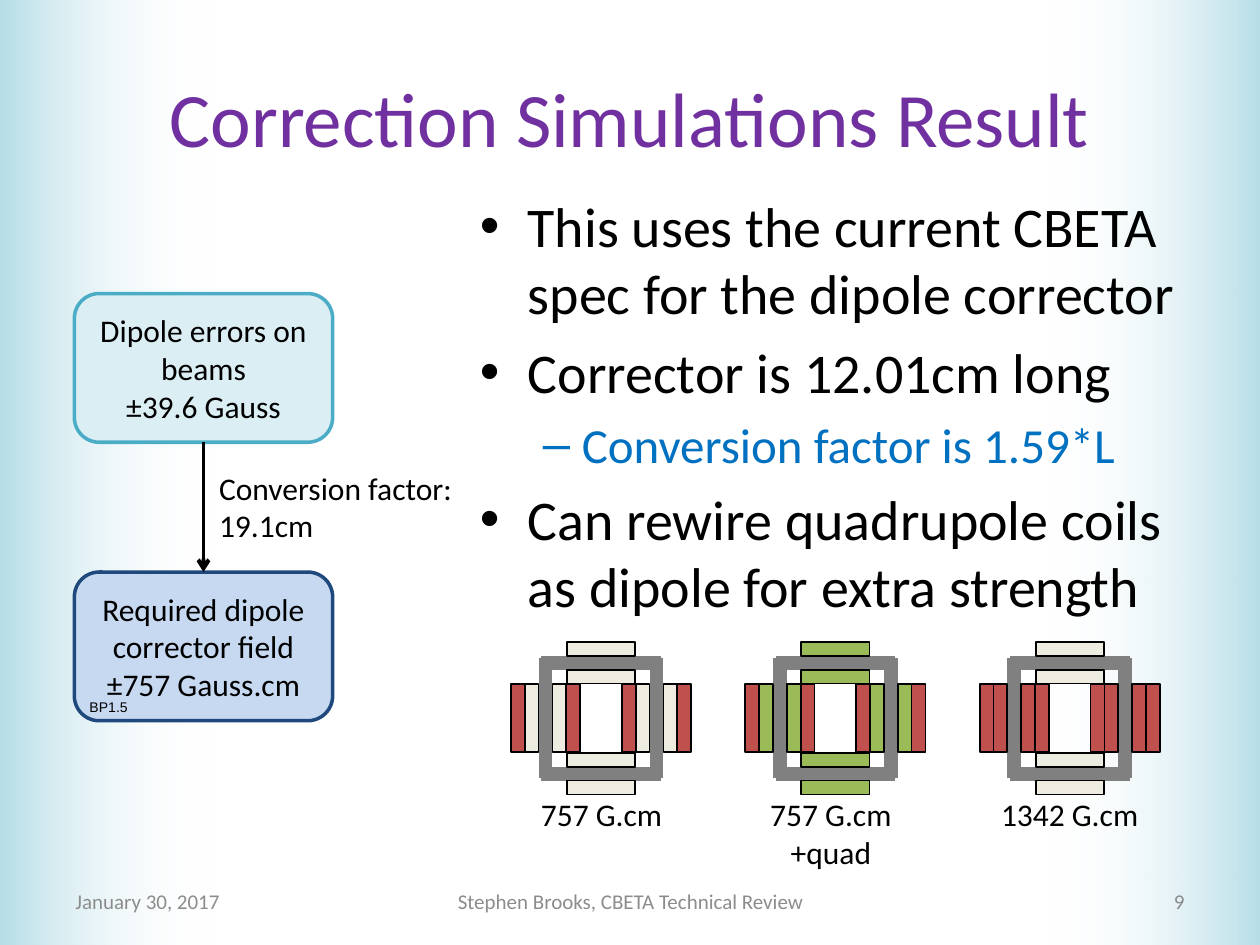
from dataclasses import dataclass

from lxml.etree import SubElement
from pptx import Presentation
from pptx.dml.color import RGBColor
from pptx.enum.dml import MSO_LINE
from pptx.enum.shapes import MSO_CONNECTOR, MSO_SHAPE
from pptx.enum.text import MSO_ANCHOR, MSO_AUTO_SIZE, PP_ALIGN
from pptx.oxml.ns import qn
from pptx.shapes.autoshape import Shape
from pptx.shapes.group import GroupShape
from pptx.slide import Slide
from pptx.text.text import TextFrame
from pptx.util import Inches, Pt


@dataclass(frozen=True)
class Theme:
    font: str = "Calibri"
    tag_font: str = "Arial"
    title: str = "7030A0"
    text: str = "000000"
    accent: str = "0070C0"
    footer: str = "8C8C8C"
    page: str = "898989"
    edge: str = "B7DEE8"
    paper: str = "FFFFFF"
    yoke: str = "808080"
    idle: str = "EEECE1"
    dipole: str = "C0504D"
    quad: str = "9BBB59"
    title_size: int = 44
    body_size: int = 32
    sub_size: int = 28
    label_size: int = 18
    footer_size: int = 12
    tag_size: int = 8


THEME = Theme()


@dataclass(frozen=True)
class Box:
    left: float
    top: float
    width: float
    height: float

    def lengths(self) -> list[Inches]:
        return [Inches(v) for v in (self.left, self.top, self.width, self.height)]


@dataclass(frozen=True)
class Label:
    text: str
    box: Box
    size: int = THEME.label_size
    color: str = THEME.text
    align: PP_ALIGN = PP_ALIGN.LEFT
    anchor: MSO_ANCHOR = MSO_ANCHOR.TOP
    font: str = THEME.font
    wrap: bool = False
    inset: tuple[float, float] = (0.1, 0.05)


@dataclass(frozen=True)
class Stage:
    text: str
    top: float
    fill: str
    outline: str


@dataclass(frozen=True)
class Bullet:
    text: str
    level: int = 0


@dataclass(frozen=True)
class BulletStyle:
    mark: str
    margin: float
    hanging: float
    size: int
    color: str


@dataclass(frozen=True)
class Magnet:
    inner: str
    outer: str
    pole: str
    caption: Label


BULLET_STYLES = (
    BulletStyle("•", 0.38, 0.38, THEME.body_size, THEME.text),
    BulletStyle("–", 0.81, 0.31, THEME.sub_size, THEME.accent),
)
BULLETS = (
    Bullet("This uses the current CBETA spec for the dipole corrector"),
    Bullet("Corrector is 12.01cm long"),
    Bullet("Conversion factor is 1.59*L", 1),
    Bullet("Can rewire quadrupole coils as dipole for extra strength"),
)
STAGES = (
    Stage("Dipole errors on beams\n±39.6 Gauss", 2.33, "DBEEF4", "4BACC6"),
    Stage("Required dipole corrector field\n±757 Gauss.cm", 4.54, "C6D9F1", "1F497D"),
)
MAGNETS = (
    Magnet(THEME.idle, THEME.dipole, THEME.idle,
           Label("757 G.cm", Box(4.19, 6.26, 1.17, 0.4), align=PP_ALIGN.CENTER)),
    Magnet(THEME.quad, THEME.dipole, THEME.quad,
           Label("757 G.cm\n+quad", Box(6.01, 6.26, 1.17, 0.71), align=PP_ALIGN.CENTER)),
    Magnet(THEME.dipole, THEME.dipole, THEME.idle,
           Label("1342 G.cm", Box(7.84, 6.26, 1.3, 0.4), align=PP_ALIGN.CENTER)),
)
FOOTERS = (
    Label("January 30, 2017", Box(0.5, 6.95, 2.33, 0.4), THEME.footer_size, THEME.footer,
          PP_ALIGN.LEFT, MSO_ANCHOR.MIDDLE, wrap=True),
    Label("Stephen Brooks, CBETA Technical Review", Box(3.42, 6.95, 3.17, 0.4),
          THEME.footer_size, THEME.footer, PP_ALIGN.CENTER, MSO_ANCHOR.MIDDLE, wrap=True),
    Label("9", Box(7.17, 6.95, 2.33, 0.4), THEME.footer_size, THEME.page,
          PP_ALIGN.RIGHT, MSO_ANCHOR.MIDDLE, wrap=True),
)
CONVERSION = Label("Conversion factor:\n19.1cm", Box(1.64, 3.67, 2.07, 0.71))
TAG = Label("BP1.5", Box(0.67, 5.5, 0.39, 0.21), THEME.tag_size,
            font=THEME.tag_font, inset=(0.04, 0.04))

FIRST_MAGNET_X, MAGNET_Y, MAGNET_PITCH = 4.77, 5.7, 1.86
LIMB_OFFSET, BAR, LIMB_LENGTH, COIL_LENGTH = 0.44, 0.11, 0.95, 0.54


def style_text(frame: TextFrame, size: int, color: str, align: PP_ALIGN,
               font: str = THEME.font) -> None:
    for paragraph in frame.paragraphs:
        paragraph.alignment = align
        for run in paragraph.runs:
            run.font.name = font
            run.font.size = Pt(size)
            run.font.color.rgb = RGBColor.from_string(color)


def add_label(slide: Slide, label: Label) -> None:
    frame = slide.shapes.add_textbox(*label.box.lengths()).text_frame
    frame.text = label.text
    frame.word_wrap = label.wrap
    frame.auto_size = MSO_AUTO_SIZE.NONE if label.wrap else MSO_AUTO_SIZE.SHAPE_TO_FIT_TEXT
    frame.vertical_anchor = label.anchor
    frame.margin_left = frame.margin_right = Inches(label.inset[0])
    frame.margin_top = frame.margin_bottom = Inches(label.inset[1])
    style_text(frame, label.size, label.color, label.align, label.font)


def add_edge(slide: Slide, left: float, rotation: int) -> None:
    edge = slide.shapes.add_shape(MSO_SHAPE.RECTANGLE, *Box(left, 0, 1.69, 7.5).lengths())
    edge.rotation = rotation
    edge.shadow.inherit = False
    edge.line.fill.background()
    edge.fill.gradient()
    edge.fill.gradient_angle = 0
    for stop, color in zip(edge.fill.gradient_stops, (THEME.edge, THEME.paper)):
        stop.color.rgb = RGBColor.from_string(color)
    faded = list(edge._element.spPr.iter(qn("a:srgbClr")))[-1]
    SubElement(faded, qn("a:alpha"), val="0")
    slide.shapes._spTree.insert(2, edge._element)


def add_title(slide: Slide) -> None:
    title = slide.shapes.title
    title.left, title.top, title.width, title.height = Box(0.5, 0.3, 9, 1.25).lengths()
    title.text_frame.text = "Correction Simulations Result"
    title.text_frame.vertical_anchor = MSO_ANCHOR.MIDDLE
    style_text(title.text_frame, THEME.title_size, THEME.title, PP_ALIGN.CENTER)


def add_bullets(slide: Slide) -> None:
    frame = slide.shapes.add_textbox(*Box(3.71, 1.47, 5.79, 3.7).lengths()).text_frame
    frame.word_wrap = True
    frame.text = "\n".join(bullet.text for bullet in BULLETS)
    for paragraph, bullet in zip(frame.paragraphs, BULLETS):
        style = BULLET_STYLES[bullet.level]
        paragraph.level = bullet.level
        paragraph.space_before = Pt(style.size * 0.2)
        run_font = paragraph.runs[0].font
        run_font.name, run_font.size = THEME.font, Pt(style.size)
        run_font.color.rgb = RGBColor.from_string(style.color)
        properties = paragraph._p.get_or_add_pPr()
        properties.set("marL", str(Inches(style.margin)))
        properties.set("indent", str(-Inches(style.hanging)))
        SubElement(properties, qn("a:buFont"), typeface="Arial")
        SubElement(properties, qn("a:buChar"), char=style.mark)


def add_stage(slide: Slide, stage: Stage) -> Shape:
    block = slide.shapes.add_shape(MSO_SHAPE.ROUNDED_RECTANGLE,
                                   *Box(0.59, stage.top, 2.05, 1.18).lengths())
    block.shadow.inherit = False
    block.fill.solid()
    block.fill.fore_color.rgb = RGBColor.from_string(stage.fill)
    block.line.color.rgb = RGBColor.from_string(stage.outline)
    block.line.width = Pt(2)
    block.text_frame.text = stage.text
    block.text_frame.vertical_anchor = MSO_ANCHOR.MIDDLE
    style_text(block.text_frame, THEME.label_size, THEME.text, PP_ALIGN.CENTER)
    return block


def add_arrow(slide: Slide, source: Shape, target: Shape) -> None:
    arrow = slide.shapes.add_connector(MSO_CONNECTOR.STRAIGHT, 0, 0, 0, 0)
    arrow.begin_connect(source, 2)
    arrow.end_connect(target, 0)
    arrow.line.color.rgb = RGBColor.from_string(THEME.text)
    arrow.line.width = Pt(2.25)
    SubElement(arrow.line._get_or_add_ln(), qn("a:tailEnd"), type="arrow")
    SubElement(arrow._element.spPr, qn("a:effectLst"))


def add_bar(group: GroupShape, x: float, y: float, length: float, fill: str,
            rotation: int, outlined: bool) -> None:
    box = Box(x - BAR / 2, y - length / 2, BAR, length)
    bar = group.shapes.add_shape(MSO_SHAPE.FLOWCHART_PROCESS, *box.lengths())
    bar.rotation = rotation
    bar.shadow.inherit = False
    bar.fill.solid()
    bar.fill.fore_color.rgb = RGBColor.from_string(fill)
    if outlined:
        bar.line.color.rgb = RGBColor.from_string(THEME.text)
        bar.line.width = Pt(1)
    else:
        bar.line.fill.background()


def add_magnet(slide: Slide, magnet: Magnet, x: float) -> None:
    group = slide.shapes.add_group_shape()
    side_coils = ((-1, magnet.inner), (1, magnet.inner), (-2, magnet.outer), (2, magnet.outer))
    for limb in (-LIMB_OFFSET, LIMB_OFFSET):
        add_bar(group, x + limb, MAGNET_Y, LIMB_LENGTH, THEME.yoke, 0, False)
        for step, fill in side_coils:
            add_bar(group, x + limb + step * BAR, MAGNET_Y, COIL_LENGTH, fill, 0, True)
    for limb in (-LIMB_OFFSET, LIMB_OFFSET):
        add_bar(group, x, MAGNET_Y + limb, LIMB_LENGTH, THEME.yoke, 90, False)
        for step in (-1, 1):
            add_bar(group, x, MAGNET_Y + limb + step * BAR, COIL_LENGTH, magnet.pole, 90, True)


def main() -> None:
    deck = Presentation()
    deck.slide_width, deck.slide_height = Inches(10), Inches(7.5)
    slide = deck.slides.add_slide(deck.slide_layouts[5])
    for left, rotation in ((0, 0), (8.31, 180)):
        add_edge(slide, left, rotation)
    add_title(slide)
    add_bullets(slide)
    for footer in FOOTERS:
        add_label(slide, footer)
    errors, corrector = [add_stage(slide, stage) for stage in STAGES]
    add_arrow(slide, errors, corrector)
    add_label(slide, CONVERSION)
    for index, magnet in enumerate(MAGNETS):
        add_magnet(slide, magnet, FIRST_MAGNET_X + index * MAGNET_PITCH)
    for magnet in MAGNETS:
        add_label(slide, magnet.caption)
    add_label(slide, TAG)
    deck.save("out.pptx")


if __name__ == "__main__":
    main()
